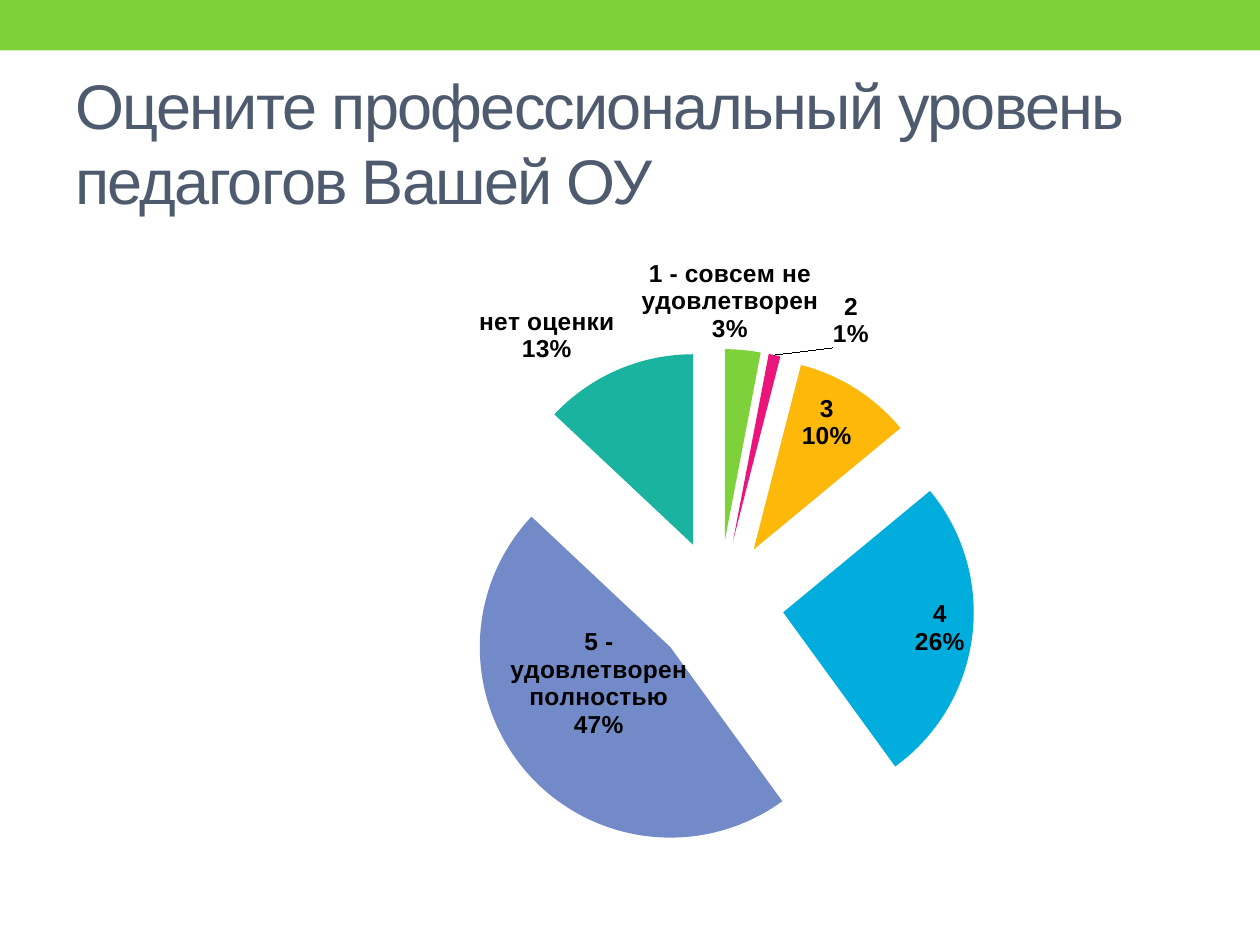
import pptx
import pptx.util
import pptx.dml.color
import pptx.chart.data
import pptx.enum.chart
import pptx.enum.shapes
import pptx.enum.text
import pptx.oxml

Pt = pptx.util.Pt
RGB = pptx.dml.color.RGBColor
Pos = pptx.enum.chart.XL_LABEL_POSITION

# Content
TITLE = "Оцените профессиональный уровень педагогов Вашей ОУ"
GREEN = RGB(0x7F, 0xD1, 0x3B)
PINK = RGB(0xEA, 0x15, 0x7A)
AMBER = RGB(0xFE, 0xB8, 0x0A)
BLUE = RGB(0x00, 0xAD, 0xDC)
INDIGO = RGB(0x73, 0x8A, 0xC8)
TEAL = RGB(0x1A, 0xB3, 0x9F)
SLATE = RGB(0x4E, 0x5B, 0x6F)
BLACK = RGB(0, 0, 0)
FONT = "Arial"
# Name, value, colour, label place, label shift (share of chart size)
SLICES = [
    ("1 - совсем не удовлетворен", 0.03, GREEN, Pos.OUTSIDE_END, (-0.09, 0)),
    ("2", 0.01, PINK, Pos.OUTSIDE_END, (0.05, 0)),
    ("3", 0.10, AMBER, Pos.INSIDE_END, None),
    ("4", 0.26, BLUE, Pos.INSIDE_END, (0, 0.03)),
    ("5 - удовлетворен полностью", 0.47, INDIGO, Pos.CENTER, (0, -0.04)),
    ("нет оценки", 0.13, TEAL, Pos.OUTSIDE_END, None),
]
EXPLODE = 34
PLOT = {"x": 0.33, "y": 0.16, "w": 0.46, "h": 0.76}


def style(font, size, color, bold=False):
    font.name, font.size, font.bold = FONT, Pt(size), bold
    font.color.rgb = color


def put_text(frame, text, size=36, color=BLACK, space=0):
    frame.word_wrap = True
    frame.vertical_anchor = pptx.enum.text.MSO_ANCHOR.MIDDLE
    para = frame.paragraphs[0]
    para.alignment = pptx.enum.text.PP_ALIGN.LEFT
    run = para.add_run()
    run.text = text
    style(run.font, size, color)
    run.font._element.set("spc", str(space * 100))


def node(tag, body="", val=None):
    attr = "" if val is None else f' val="{val}"'
    space = "http://schemas.openxmlformats.org/drawingml/2006/chart"
    return pptx.oxml.parse_xml(
        f'<c:{tag} xmlns:c="{space}"{attr}>{body}</c:{tag}>')


def layout(spots, head=""):
    body = head + "".join(f'<c:{k} val="{v}"/>' for k, v in spots.items())
    return node("layout", f"<c:manualLayout>{body}</c:manualLayout>")


deck = pptx.Presentation()
deck.slide_width, deck.slide_height = Pt(720), Pt(540)
slide = deck.slides.add_slide(deck.slide_layouts[5])

# Top band
band = slide.shapes.add_shape(
    pptx.enum.shapes.MSO_SHAPE.RECTANGLE, 0, 0, Pt(720), Pt(28.8))
band.shadow.inherit = False
band.fill.solid()
band.fill.fore_color.rgb = GREEN
band.line.fill.background()

# Title
title = slide.shapes.title
title.left, title.top, title.width, title.height = map(Pt, (36, 42, 648, 78))
put_text(title.text_frame, TITLE, color=SLATE, space=-1)

# Pie chart
data = pptx.chart.data.CategoryChartData(number_format="0%")
data.categories = [row[0] for row in SLICES]
data.add_series("Series 1", [row[1] for row in SLICES])
chart = slide.shapes.add_chart(
    pptx.enum.chart.XL_CHART_TYPE.PIE,
    Pt(48), Pt(138), Pt(648), Pt(384), data).chart
chart.has_legend = chart.has_title = False
style(chart.font, 10, BLACK)
plot = chart.plots[0]
plot.vary_by_categories = True
series = plot.series[0]
labels = series.data_labels
labels.show_value = labels.show_category_name = True
style(labels.font, 14, BLACK, bold=True)

for i, (name, value, color, place, shift) in enumerate(SLICES):
    point = series.points[i]
    point.format.fill.solid()
    point.format.fill.fore_color.rgb = color
    style(point.data_label.font, 14, BLACK, bold=True)
    point.data_label.position = place

# Exploded slices, label parts and plot place
root = chart.element
root.xpath(".//c:ser/c:tx")[0].addnext(node("explosion", val=EXPLODE))
for part in root.xpath(".//c:dPt/c:spPr"):
    part.addprevious(node("explosion", val=EXPLODE))
for label, row in zip(root.xpath(".//c:dLbl"), SLICES):
    label.xpath("c:showCatName")[0].set("val", "1")
    label.append(node("separator", "\n"))
    if row[-1]:
        label.xpath("c:idx")[0].addnext(layout(dict(zip("xy", row[-1]))))
for old in root.xpath(".//c:dLbls/c:showLeaderLines"):
    old.getparent().remove(old)
group = root.xpath(".//c:ser/c:dLbls")[0]
group.append(node("separator", "\n"))
group.append(node("showLeaderLines", val=1))
area = root.xpath(".//c:plotArea")[0]
for old in area.xpath("c:layout"):
    area.remove(old)
modes = ('<c:layoutTarget val="inner"/><c:xMode val="edge"/>'
         '<c:yMode val="edge"/>')
area.insert(0, layout(PLOT, modes))

deck.save("out.pptx")
